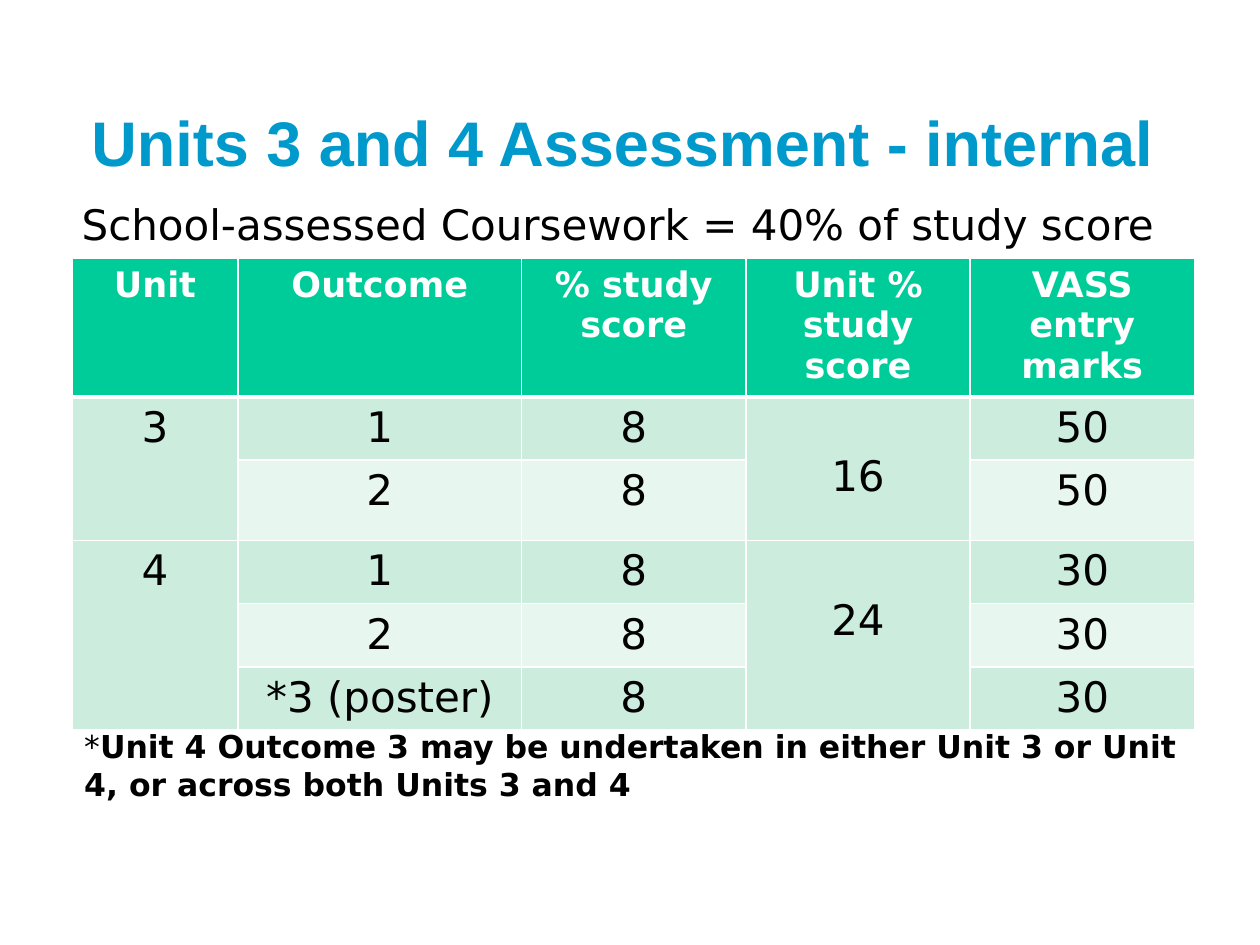
from lxml.etree import SubElement
from pptx import Presentation
from pptx.dml.color import RGBColor
from pptx.enum.text import MSO_ANCHOR, PP_ALIGN
from pptx.oxml.ns import qn
from pptx.util import Inches, Pt

COLORS = {
    "title": "0099CC",
    "header": "00CC99",
    "odd": "CCECDE",
    "even": "E7F6EF",
    "white": "FFFFFF",
    "black": "000000",
}
COLUMN_WIDTHS = [1.32, 2.25, 1.78, 1.78, 1.78]
ROW_HEIGHTS = [1.05, 0.49, 0.64, 0.49, 0.49, 0.49]
HEADINGS = ["Unit", "Outcome", "% study score", "Unit % study score", "VASS entry marks"]
UNITS = [
    ("3", "16", [("1", "8", "50"), ("2", "8", "50")]),
    ("4", "24", [("1", "8", "30"), ("2", "8", "30"), ("*3 (poster)", "8", "30")]),
]


def rgb(name):
    return RGBColor.from_string(COLORS[name])


def write(paragraph, text, size=24, font="DejaVu Sans", color="black", bold=False, align=PP_ALIGN.LEFT):
    paragraph.alignment = align
    run = paragraph.add_run()
    run.text = text
    run.font.size = Pt(size)
    run.font.name = font
    run.font.bold = bold
    run.font.color.rgb = rgb(color)


def add_text_area(slide, left, top, width, height, anchor=MSO_ANCHOR.TOP):
    frame = slide.shapes.add_textbox(Inches(left), Inches(top), Inches(width), Inches(height)).text_frame
    frame.word_wrap = True
    frame.vertical_anchor = anchor
    return frame.paragraphs[0]


def style_cell(cell, fill, bottom=1):
    properties = cell._tc.get_or_add_tcPr()
    for side, width in (("L", 1), ("R", 1), ("T", 1), ("B", bottom)):
        border = SubElement(properties, qn(f"a:ln{side}"), w=str(Pt(width)))
        line_fill = SubElement(border, qn("a:solidFill"))
        SubElement(line_fill, qn("a:srgbClr"), val=COLORS["white"])
    cell.fill.solid()
    cell.fill.fore_color.rgb = rgb(fill)


def fill_cell(cell, text, **text_format):
    write(cell.text_frame.paragraphs[0], text, align=PP_ALIGN.CENTER, **text_format)


def add_score_table(slide):
    scores = slide.shapes.add_table(
        len(ROW_HEIGHTS), len(COLUMN_WIDTHS), Inches(0.57), Inches(2.05),
        Inches(sum(COLUMN_WIDTHS)), Inches(sum(ROW_HEIGHTS)),
    ).table
    for column, width in zip(scores.columns, COLUMN_WIDTHS):
        column.width = Inches(width)
    for row, height in zip(scores.rows, ROW_HEIGHTS):
        row.height = Inches(height)

    for column, heading in enumerate(HEADINGS):
        style_cell(scores.cell(0, column), "header", bottom=3)
        fill_cell(scores.cell(0, column), heading, size=20, color="white", bold=True)

    first_row = 1
    for unit, unit_score, outcomes in UNITS:
        for offset, outcome in enumerate(outcomes):
            band = "even" if offset % 2 else "odd"
            for column in range(len(HEADINGS)):
                style_cell(scores.cell(first_row + offset, column), "odd" if column in (0, 3) else band)
            for column, value in zip((1, 2, 4), outcome):
                fill_cell(scores.cell(first_row + offset, column), value)
        last_row = first_row + len(outcomes) - 1
        for column, value in ((0, unit), (3, unit_score)):
            spanning = scores.cell(first_row, column)
            spanning.merge(scores.cell(last_row, column))
            fill_cell(spanning, value)
        scores.cell(first_row, 3).margin_top = Inches(0.44)
        first_row = last_row + 1


def main():
    presentation = Presentation()
    presentation.slide_width = Inches(10)
    presentation.slide_height = Inches(7.5)
    slide = presentation.slides.add_slide(presentation.slide_layouts[6])

    title = add_text_area(slide, 0.55, 0.7, 8.78, 0.84, MSO_ANCHOR.MIDDLE)
    write(title, "Units 3 and 4 Assessment - internal", size=36, font="Arial",
          color="title", bold=True, align=PP_ALIGN.CENTER)

    add_score_table(slide)

    footnote = add_text_area(slide, 0.57, 5.72, 9.22, 0.71)
    write(footnote, "*", size=18)
    write(footnote, "Unit 4 Outcome 3 may be undertaken in either Unit 3 or Unit 4, or across both Units 3 and 4",
          size=18, bold=True)

    coursework = add_text_area(slide, 0.55, 1.53, 9.1, 0.5)
    write(coursework, "School-assessed Coursework = 40% of study score")

    presentation.save("out.pptx")


if __name__ == "__main__":
    main()
